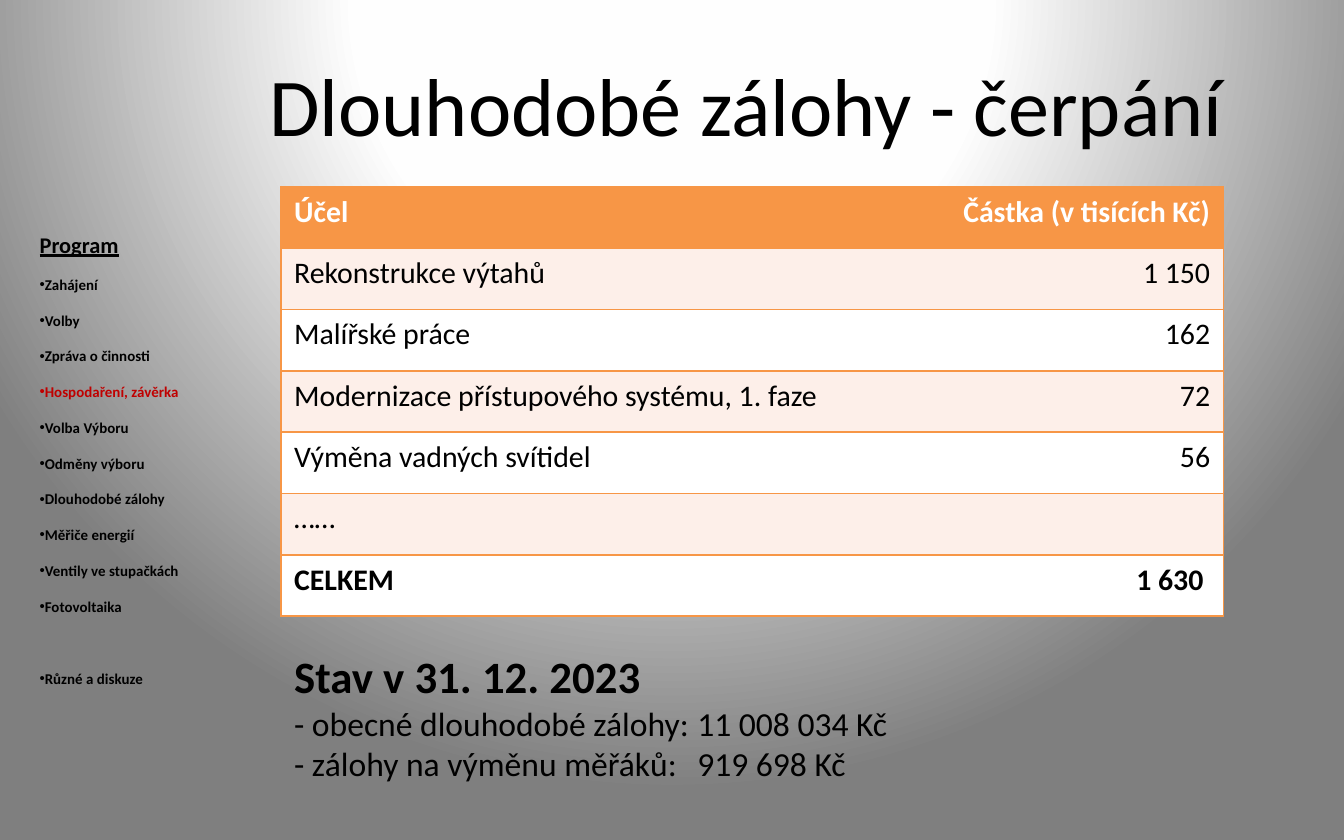
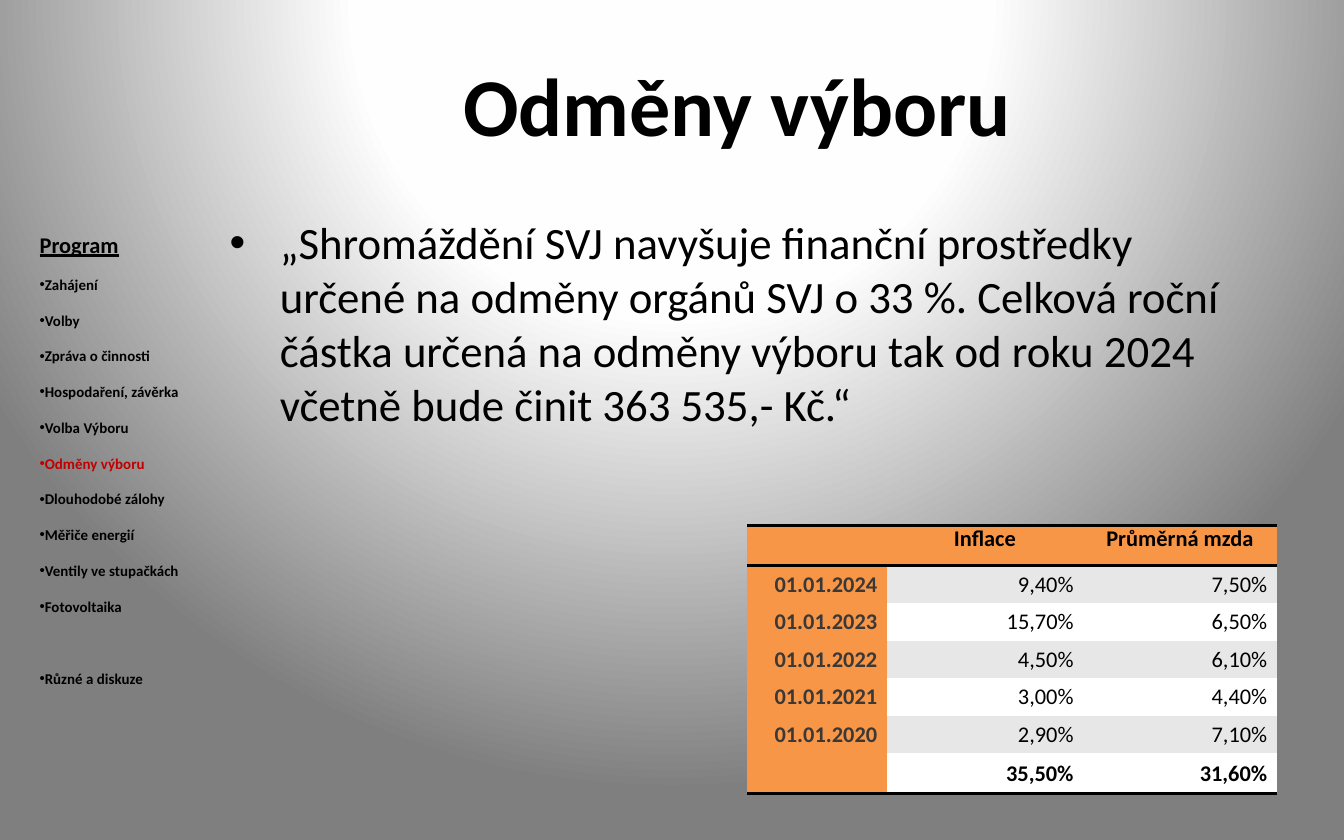
from pptx import Presentation
from pptx.dml.color import RGBColor
from pptx.enum.text import MSO_ANCHOR as ANCHOR, PP_ALIGN as ALIGN
from pptx.oxml import parse_xml
from pptx.oxml.ns import nsdecls
from pptx.util import Cm, Pt

BLACK, WHITE, ORANGE, RED = "000000", "FFFFFF", "F79646", "C00000"
NO_STYLE = "{2D5ABB26-0587-4C30-8999-92F81FD0307C}"
NS = nsdecls("a")


def paint(fill, colour):
    fill.solid()
    fill.fore_color.rgb = RGBColor.from_string(colour)


def write(paragraph, text, size, colour=BLACK, bullet=False, **extra):
    if bullet:
        properties = paragraph._p.get_or_add_pPr()
        properties.append(parse_xml(f'<a:buFont {NS} typeface="Arial"/>'))
        properties.append(parse_xml(f'<a:buChar {NS} char="•"/>'))
    run = paragraph.add_run()
    run.text = text
    for name, value in {"name": "Calibri", "size": Pt(size), "bold": False, **extra}.items():
        setattr(run.font, name, value)
    paint(run.font.fill, colour)


AGENDA = [
    "Zahájení", "Volby", "Zpráva o činnosti", "Hospodaření, závěrka",
    "Volba Výboru", "Odměny výboru", "Dlouhodobé zálohy", "Měřiče energií",
    "Ventily ve stupačkách", "Fotovoltaika", "Různé a diskuze",
]

spending = {
    "place": (5.31, 3.53), "columns": [12.4, 5.41], "row_height": 1.16,
    "size": 16, "header_ink": WHITE, "label_ink": BLACK, "label_fill": None,
    "stripe": "FDEFE9", "line": (ORANGE, 1), "margins": (0.25, 0.13),
    "row_edges": {row: "TB" for row in range(7)}, "column_edges": {0: "L", 1: "R"},
    "header_align": [ALIGN.LEFT, ALIGN.RIGHT], "align": [ALIGN.LEFT, ALIGN.RIGHT],
    "anchor": ANCHOR.TOP,
    "rows": [
        ("Účel", "Částka (v tisících Kč)"),
        ("Rekonstrukce výtahů", "1 150"),
        ("Malířské práce", "162"),
        ("Modernizace přístupového systému, 1. faze", "72"),
        ("Výměna vadných svítidel", "56"),
        ("……", ""),
        ("CELKEM", "1 630 "),
    ],
}

growth = {
    "place": (14.12, 9.93), "columns": [2.64, 3.71, 3.66], "row_height": 0.71,
    "size": 12, "header_ink": BLACK, "label_ink": "3B3838", "label_fill": ORANGE,
    "stripe": "E7E7E7", "line": (BLACK, 2), "margins": (0.18, 0),
    "row_edges": {0: "TB", 6: "B"}, "column_edges": {},
    "header_align": [ALIGN.CENTER] * 3, "align": [ALIGN.RIGHT] * 3,
    "anchor": ANCHOR.MIDDLE,
    "rows": [
        ("", "Inflace", "Průměrná mzda"),
        ("01.01.2024", "9,40%", "7,50%"),
        ("01.01.2023", "15,70%", "6,50%"),
        ("01.01.2022", "4,50%", "6,10%"),
        ("01.01.2021", "3,00%", "4,40%"),
        ("01.01.2020", "2,90%", "7,10%"),
        ("", "35,50%", "31,60%"),
    ],
}

deck = Presentation()
deck.slide_width, deck.slide_height = Cm(25.4), Cm(15.88)
title_only = deck.slide_layouts[5]

backdrop = deck.slide_master.background.fill
backdrop.solid()
plain = deck.slide_master.element.xpath("./p:cSld/p:bg/p:bgPr/a:solidFill")[0]
stops = "".join(
    f'<a:gs pos="{position * 1000}"><a:srgbClr val="{colour}"/></a:gs>'
    for position, colour in [(0, WHITE), (40, "FEFEFE"), (100, "7F7F7F")]
)
plain.getparent().replace(plain, parse_xml(
    f'<a:gradFill {NS} rotWithShape="1"><a:gsLst>{stops}</a:gsLst><a:path path="circle">'
    '<a:fillToRect l="50000" t="-80000" r="50000" b="180000"/></a:path></a:gradFill>'
))

slides = []
for heading, bold, current, data in [
    ("Dlouhodobé zálohy - čerpání", False, "Hospodaření, závěrka", spending),
    ("Odměny výboru ", True, "Odměny výboru", growth),
]:
    slide = deck.slides.add_slide(title_only)
    slides.append(slide)

    title = slide.shapes.title
    title.left, title.top, title.width, title.height = Cm(4.09), Cm(0.64), Cm(20.04), Cm(2.64)
    title.text_frame.vertical_anchor = ANCHOR.MIDDLE
    title.text_frame.paragraphs[0].alignment = ALIGN.CENTER
    write(title.text_frame.paragraphs[0], heading, 44, bold=bold)

    program = slide.shapes.add_textbox(Cm(0.5), Cm(3.73), Cm(3.2), Cm(10.08)).text_frame
    program.word_wrap = True
    program.paragraphs[0].line_spacing = 2.0
    write(program.paragraphs[0], "Program", 12, bold=True, underline=True)
    for topic in AGENDA:
        entry = program.add_paragraph()
        entry.line_spacing = 2.0
        if topic == AGENDA[-1]:
            entry.space_before = Pt(19.5)
        write(entry, topic, 8, RED if topic == current else BLACK, bullet=True, bold=True)

    rows, columns = data["rows"], data["columns"]
    left, top = data["place"]
    height = data["row_height"]
    frame = slide.shapes.add_table(
        len(rows), len(columns), Cm(left), Cm(top), Cm(sum(columns)), Cm(height * len(rows))
    )
    table = frame.table
    table.horz_banding = False
    frame._element.xpath(".//a:tableStyleId")[0].text = NO_STYLE
    for column, width in zip(table.columns, columns):
        column.width = Cm(width)
    line_colour, line_width = data["line"]
    side, vertical = data["margins"]
    for r, values in enumerate(rows):
        table.rows[r].height = Cm(height)
        is_header, is_total = r == 0, r == len(rows) - 1
        for c, value in enumerate(values):
            cell = table.cell(r, c)
            is_label = c == 0 and data["label_fill"] is not None
            for name, length in {
                "margin_left": side, "margin_right": side,
                "margin_top": vertical, "margin_bottom": vertical,
            }.items():
                setattr(cell, name, Cm(length))
            cell.vertical_anchor = ANCHOR.TOP if is_header else data["anchor"]
            edges = data["row_edges"].get(r, "") + data["column_edges"].get(c, "")
            for edge in "LRTB":
                if edge in edges:
                    cell._tc.get_or_add_tcPr().append(parse_xml(
                        f'<a:ln{edge} {NS} w="{Pt(line_width)}"><a:solidFill>'
                        f'<a:srgbClr val="{line_colour}"/></a:solidFill></a:ln{edge}>'
                    ))
            if is_header:
                ink, shade = data["header_ink"], ORANGE
            else:
                ink = data["label_ink"] if is_label else BLACK
                shade = data["label_fill"] if is_label else data["stripe"] if r % 2 else WHITE
            paint(cell.fill, shade)
            paragraph = cell.text_frame.paragraphs[0]
            paragraph.alignment = data["header_align" if is_header else "align"][c]
            write(paragraph, value, data["size"], ink, bold=is_header or is_total or is_label)

reserves, rewards = slides

balance = reserves.shapes.add_textbox(Cm(5.31), Cm(12.14), Cm(17.81), Cm(2.82)).text_frame
balance.word_wrap = True
write(balance.paragraphs[0], "Stav v 31. 12. 2023", 24, bold=True)
for item in ["- obecné dlouhodobé zálohy:\t11 008 034 Kč", "- zálohy na výměnu měřáků: \t919 698 Kč"]:
    paragraph = balance.add_paragraph()
    paragraph._p.get_or_add_pPr().append(
        parse_xml(f'<a:tabLst {NS}><a:tab pos="{Cm(7.62)}" algn="l"/></a:tabLst>')
    )
    write(paragraph, item, 18)

resolution = rewards.shapes.add_textbox(Cm(4.09), Cm(3.94), Cm(19.99), Cm(10.8)).text_frame
resolution.word_wrap = True
proposal = resolution.paragraphs[0]
for name, length in {"marL": 0.95, "indent": -0.95}.items():
    proposal._p.get_or_add_pPr().set(name, str(Cm(length)))
write(
    proposal,
    "„Shromáždění SVJ navyšuje finanční prostředky určené na odměny orgánů SVJ o 33 %. "
    "Celková roční částka určená na odměny výboru tak od roku 2024 včetně bude činit 363 535,- Kč.“",
    24, bullet=True,
)

deck.save("out.pptx")
